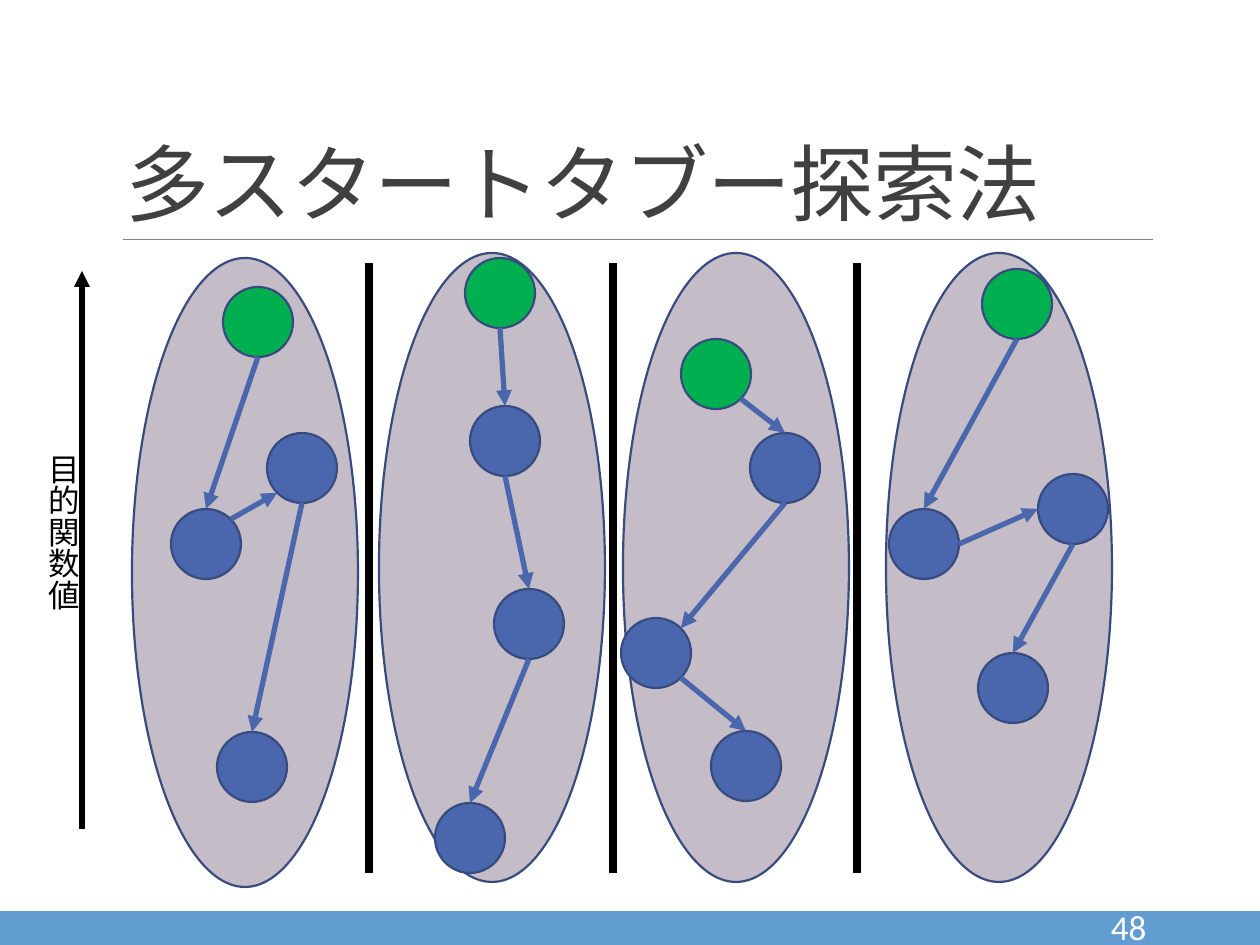
from itertools import pairwise
from math import sqrt

from lxml.etree import SubElement
from pptx import Presentation
from pptx.dml.color import RGBColor
from pptx.enum.shapes import MSO_CONNECTOR, MSO_SHAPE
from pptx.enum.text import MSO_ANCHOR, MSO_AUTO_SIZE, PP_ALIGN
from pptx.oxml.ns import qn
from pptx.util import Emu, Pt

TITLE = "多スタートタブー探索法"
AXIS_LABEL = "目的関数値"
PAGE_NUMBER = "48"

WHITE = RGBColor(0xFF, 0xFF, 0xFF)
BLACK = RGBColor(0x00, 0x00, 0x00)
DARK_GRAY = RGBColor(0x40, 0x40, 0x40)
RULE_GRAY = RGBColor(0x80, 0x80, 0x80)
FOOTER_BLUE = RGBColor(0x62, 0x9D, 0xD1)
REGION_GRAY = RGBColor(0xC4, 0xBC, 0xC6)
OUTLINE = RGBColor(0x37, 0x4B, 0x7F)
BLUE = RGBColor(0x4A, 0x66, 0xAC)
START_GREEN = RGBColor(0x00, 0xB0, 0x50)

REGION_SIZE = (226, 629)
NODE_SIZE = 70
DIVIDER_START, DIVIDER_STEP, DIVIDER_COUNT = 369, 244, 3

# Each search: corner of its region, node centres in visiting order,
# and the sides of the nodes that each step leaves and enters.
DOWN = ("bottom", "top")
SEARCHES = [
    {"region": (132, 258),
     "nodes": [(258, 322), (206, 544), (302, 468), (252, 767)],
     "steps": [DOWN, ("top right", "bottom left"), DOWN]},
    {"region": (379, 253),
     "nodes": [(500, 293), (505, 441), (529, 624), (470, 838)],
     "steps": [DOWN, DOWN, DOWN]},
    {"region": (623, 253),
     "nodes": [(716, 374), (785, 468), (656, 653), (746, 766)],
     "steps": [("bottom right", "top"), ("bottom", "top right"),
               ("bottom right", "top")]},
    {"region": (886, 253),
     "nodes": [(1017, 304), (924, 544), (1073, 509), (1013, 688)],
     "steps": [DOWN, ("right", "left"), DOWN]},
]
DIRECTIONS = {"top": (0, -1), "bottom": (0, 1), "left": (-1, 0), "right": (1, 0)}


def px(value):
    return Emu(round(value * 914400 / 126))


def add_filled(kind, left, top, width, height, fill, outline=None):
    shape = page.shapes.add_shape(kind, px(left), px(top), px(width), px(height))
    shape.shadow.inherit = False
    shape.fill.solid()
    shape.fill.fore_color.rgb = fill
    if outline is None:
        shape.line.fill.background()
    else:
        shape.line.color.rgb = outline
        shape.line.width = Pt(1.25)


def add_line(start, end, color, width, arrow=False):
    line = page.shapes.add_connector(
        MSO_CONNECTOR.STRAIGHT, *(px(value) for value in (*start, *end)))
    line.line.color.rgb = color
    line.line.width = Pt(width)
    properties = line._element.spPr
    if arrow:
        SubElement(properties.find(qn("a:ln")), qn("a:tailEnd"), type="triangle")
    SubElement(properties, qn("a:effectLst"))


def write_text(box, text, size, color, alignment, frame_format):
    frame = box.text_frame
    frame_format = {"word_wrap": True, "auto_size": MSO_AUTO_SIZE.NONE, **frame_format}
    for name, value in frame_format.items():
        setattr(frame, name, value)
    para = frame.paragraphs[0]
    para.alignment = alignment
    span = para.add_run()
    span.text = text
    for name, value in {"name": "Calibri", "size": Pt(size)}.items():
        setattr(span.font, name, value)
    span.font.color.rgb = color
    return para, span


def edge_point(center, side):
    """Point on a node's rim in the direction named by side."""
    vectors = [DIRECTIONS[word] for word in side.split()]
    reach = NODE_SIZE / 2 / sqrt(len(vectors))
    return tuple(middle + reach * sum(parts)
                 for middle, parts in zip(center, zip(*vectors)))


def add_search(search):
    nodes = search["nodes"]
    for index, (x, y) in enumerate(nodes):
        add_filled(MSO_SHAPE.OVAL, x - NODE_SIZE / 2, y - NODE_SIZE / 2,
                   NODE_SIZE, NODE_SIZE, BLUE if index else START_GREEN, OUTLINE)
    for (source, target), (leave, enter) in zip(pairwise(nodes), search["steps"]):
        add_line(edge_point(source, leave), edge_point(target, enter), BLUE, 3, arrow=True)


deck = Presentation()
deck.slide_width, deck.slide_height = px(1260), px(945)
page = deck.slides.add_slide(deck.slide_layouts[5])

title = page.shapes.title
title.left, title.top, title.width, title.height = px(113), px(39), px(1040), px(200)
title_para, title_span = write_text(
    title, TITLE, 48, DARK_GRAY, PP_ALIGN.LEFT, {"vertical_anchor": MSO_ANCHOR.BOTTOM})
title_para.line_spacing = 0.85
title_span.font._element.set("spc", "-50")

add_filled(MSO_SHAPE.RECTANGLE, 0, 911, 1260, 34, FOOTER_BLUE)
add_line((123, 239), (1153, 239), RULE_GRAY, 0.5)
number = page.shapes.add_textbox(px(1058), px(911), px(101), px(30))
write_text(number, PAGE_NUMBER, 20, WHITE, PP_ALIGN.RIGHT,
           {"vertical_anchor": MSO_ANCHOR.MIDDLE})

for search in SEARCHES:
    add_filled(MSO_SHAPE.OVAL, *search["region"], *REGION_SIZE, REGION_GRAY, OUTLINE)
for search in SEARCHES:
    add_search(search)
for index in range(DIVIDER_COUNT):
    x = DIVIDER_START + index * DIVIDER_STEP
    add_line((x, 263), (x, 873), BLACK, 4.5)

add_line((82, 829), (82, 271), BLACK, 3, arrow=True)
axis_label = page.shapes.add_textbox(px(25), px(441), px(63), px(218))
write_text(axis_label, AXIS_LABEL, 18, BLACK, PP_ALIGN.LEFT, {})
axis_label.text_frame._txBody.bodyPr.set("vert", "eaVert")

deck.save("out.pptx")
